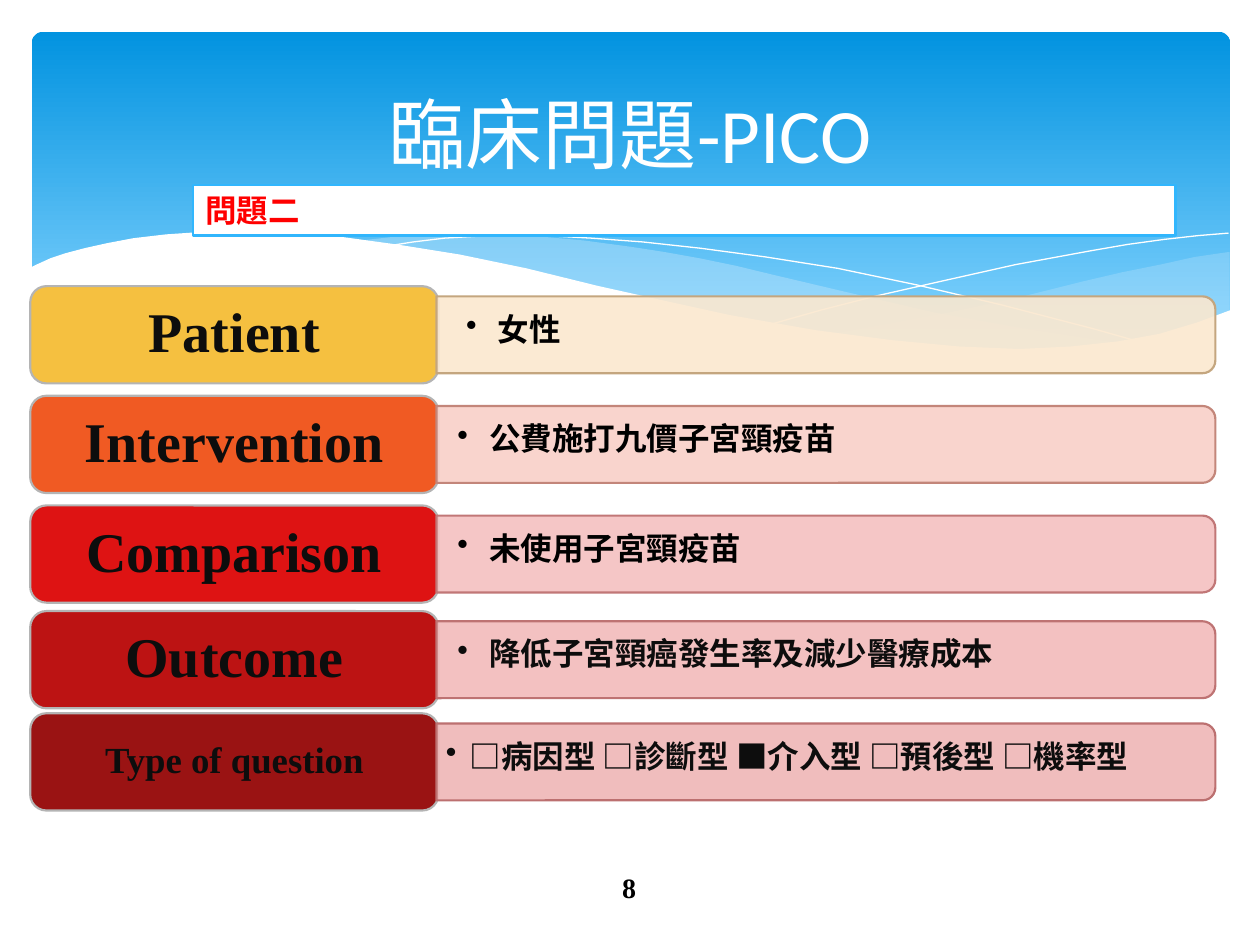
from lxml import etree
from pptx import Presentation
from pptx.dml.color import RGBColor
from pptx.enum.shapes import MSO_SHAPE
from pptx.enum.text import MSO_ANCHOR, PP_ALIGN
from pptx.oxml.ns import qn
from pptx.util import Cm, Pt

RECTANGLE = MSO_SHAPE.RECTANGLE
ROUNDED = MSO_SHAPE.ROUNDED_RECTANGLE
ROUND_TOP = MSO_SHAPE.ROUND_2_SAME_RECTANGLE
LEFT, CENTER = PP_ALIGN.LEFT, PP_ALIGN.CENTER
TOP, MIDDLE = MSO_ANCHOR.TOP, MSO_ANCHOR.MIDDLE

WHITE = RGBColor(0xFF, 0xFF, 0xFF)
BLACK = RGBColor(0x00, 0x00, 0x00)
INK = RGBColor(0x0D, 0x0D, 0x0D)
RED = RGBColor(0xFF, 0x00, 0x00)
SKY = RGBColor(0x31, 0xB6, 0xFD)
HEADER_TOP = RGBColor(0x02, 0x93, 0xE0)
HEADER_BOTTOM = RGBColor(0x83, 0xD3, 0xFE)
PALE_BLUE = RGBColor(0xC6, 0xE7, 0xFC)
GREY = RGBColor(0xB4, 0xB4, 0xB4)

SERIF, SANS, CJK = "Times New Roman", "Calibri", "Noto Sans CJK SC"


def write(shape, text, font_name, size, color, bold=True, align=CENTER, anchor=MIDDLE):
    frame = shape.text_frame
    frame.word_wrap = True
    frame.vertical_anchor = anchor
    para = frame.paragraphs[0]
    para.alignment = align
    span = para.add_run()
    span.text = text
    font = para.font
    font.name, font.size, font.bold = font_name, Pt(size), bold
    font.color.rgb = color
    etree.SubElement(font._element, qn("a:ea"), typeface=CJK)
    return para


def set_alpha(fill_format, percent):
    color = fill_format._xPr.find(qn("a:solidFill"))[0]
    etree.SubElement(color, qn("a:alpha"), val=str(percent * 1000))


deck = Presentation()
deck.slide_width, deck.slide_height = Cm(25.4), Cm(19.05)
page = deck.slides.add_slide(deck.slide_layouts[5])
shapes = page.shapes

# Blue header
header = shapes.add_shape(ROUNDED, Cm(0.64), Cm(0.64), Cm(24.16), Cm(6.86))
header.adjustments[0] = 0.034
header.shadow.inherit = False
header.line.fill.background()
header.fill.gradient()
header.fill.gradient_angle = 270
for stop, color, position in zip(header.fill.gradient_stops,
                                 (HEADER_TOP, HEADER_BOTTOM), (0, 0.9)):
    stop.color.rgb = color
    stop.position = position

# Waves: points in hundredths of an inch, fill, opacity (no fill: a thin line)
WAVES = [
    ([(975, 200), (948, 204), (921, 210), (891, 216), (861, 223), (805, 237),
      (753, 248), (706, 257), (661, 265), (691, 269), (718, 273), (745, 275),
      (769, 277), (803, 278), (835, 277), (863, 275), (889, 272), (913, 267),
      (935, 262), (949, 257), (963, 252), (976, 247), (976, 200)], PALE_BLUE, 29),
    ([(893, 273), (866, 269), (807, 260), (741, 248), (668, 231), (613, 218),
      (584, 211), (555, 205), (527, 200), (501, 196), (464, 191), (420, 187),
      (380, 186), (344, 186), (313, 188), (286, 191), (323, 196), (362, 203),
      (404, 211), (449, 222), (491, 232), (530, 240), (584, 252), (634, 261),
      (680, 268), (722, 274), (761, 277), (796, 279), (828, 278), (857, 277),
      (876, 275)], PALE_BLUE, 40),
    ([(309, 195), (328, 192), (353, 189), (387, 187), (433, 187), (469, 189),
      (510, 192), (556, 197), (608, 204), (665, 213), (727, 226), (795, 242),
      (868, 261), (907, 272)], None, 100),
    ([(613, 257), (652, 246), (695, 235), (748, 223), (806, 210), (866, 199),
      (895, 194), (924, 190), (951, 187), (975, 185)], None, 100),
    ([(977, 246), (950, 256), (920, 265), (887, 271), (850, 275), (809, 277),
      (761, 275), (708, 270), (647, 262), (579, 250), (529, 239), (475, 227),
      (418, 213), (365, 202), (315, 194), (271, 188), (230, 185), (193, 184),
      (161, 184), (132, 186), (106, 189), (85, 193), (67, 197), (52, 201),
      (40, 205), (29, 210), (23, 213), (23, 329), (977, 329)], WHITE, 100),
]
for points, color, opacity in WAVES:
    builder = shapes.build_freeform(*points[0], scale=Cm(2.54) / 100)
    builder.add_line_segments(points[1:], close=color is not None)
    wave = builder.convert_to_shape()
    wave.shadow.inherit = False
    if color is None:
        wave.fill.background()
        wave.line.color.rgb = WHITE
        wave.line.width = Pt(0)
    else:
        wave.fill.solid()
        wave.fill.fore_color.rgb = color
        set_alpha(wave.fill, opacity)
        wave.line.fill.background()

# Page number
number = shapes.add_textbox(Cm(11.07), Cm(17.37), Cm(3.23), Cm(1.02))
write(number, "8", SERIF, 16, BLACK)

# Title, brought in front of the header
title = shapes.title
title.left, title.top, title.width, title.height = Cm(1.27), Cm(0.94), Cm(22.86), Cm(3.48)
write(title, "臨床問題-PICO", SANS, 44, WHITE, bold=False)
shapes._spTree.append(title._element)

# Question box
question = shapes.add_shape(RECTANGLE, Cm(3.89), Cm(3.73), Cm(19.81), Cm(1.02))
question.shadow.inherit = False
question.fill.solid()
question.fill.fore_color.rgb = WHITE
question.line.color.rgb = SKY
question.line.width = Pt(1.5)
write(question, "問題二", CJK, 18, RED, align=LEFT, anchor=TOP)

# PICO rows: top, label, size, answer, font, colour, answer left, insets, indent,
# then label, bar and bar outline colours
WIDE, NARROW = (0.51, 0.25), (0.18, 0.1)
ROWS = [
    (5.77, "Patient", 32, "女性", SANS, BLACK, 8.89, WIDE, 0.64,
     "F5C040", "FBE8CF", "C4A67F"),
    (7.98, "Intervention", 32, "公費施打九價子宮頸疫苗", SANS, BLACK, 8.71, WIDE, 0.64,
     "F05A23", "F9D0C8", "C3867A"),
    (10.19, "Comparison", 32, "未使用子宮頸疫苗", SANS, BLACK, 8.71, WIDE, 0.64,
     "DE1313", "F4C0C0", "C17777"),
    (12.32, "Outcome", 32, "降低子宮頸癌發生率及減少醫療成本", SERIF, INK, 8.71, WIDE, 0.64,
     "BC1313", "F2BBBB", "BE7373"),
    (14.38, "Type of question", 21, "□病因型 □診斷型 ■介入型 □預後型 □機率型", SERIF, INK,
     8.81, NARROW, 0.48, "9A1313", "EFB6B6", "BC7070"),
]
LABEL_HEIGHT, BAR_LEFT, BAR_LENGTH, BAR_HEIGHT = 1.96, 8.8, 15.7, 1.55
for (top, name, size, answer, font_name, ink, answer_left, insets, indent,
     label_color, bar_color, outline_color) in ROWS:
    label = shapes.add_shape(ROUNDED, Cm(0.61), Cm(top), Cm(8.23), Cm(LABEL_HEIGHT))
    write(label, name, SERIF, size, INK).line_spacing = 0.9

    # The bar is a tall shape turned a quarter, so its round corners face right
    middle = top + LABEL_HEIGHT / 2
    bar = shapes.add_shape(ROUND_TOP, Cm(BAR_LEFT + (BAR_LENGTH - BAR_HEIGHT) / 2),
                           Cm(middle - BAR_LENGTH / 2), Cm(BAR_HEIGHT), Cm(BAR_LENGTH))
    bar.rotation = 90
    for shape, fill, line in ((label, label_color, GREY),
                              (bar, bar_color, RGBColor.from_string(outline_color))):
        shape.shadow.inherit = False
        shape.fill.solid()
        shape.fill.fore_color.rgb = RGBColor.from_string(fill)
        shape.line.color.rgb = line
        shape.line.width = Pt(1.25)
    set_alpha(bar.fill, 90)

    box = shapes.add_textbox(Cm(answer_left), Cm(top + 0.2), Cm(15.62), Cm(1.4))
    para = write(box, answer, font_name, 18, ink, align=LEFT)
    para.line_spacing = 0.9
    frame = box.text_frame
    frame.margin_left = frame.margin_right = Cm(insets[0])
    frame.margin_top = frame.margin_bottom = Cm(insets[1])
    properties = para._p.get_or_add_pPr()
    properties.set("marL", str(Cm(indent)))
    properties.set("indent", str(-Cm(indent)))
    bullet = etree.Element(qn("a:buChar"), char="•")
    properties.find(qn("a:defRPr")).addprevious(bullet)

deck.save("out.pptx")
